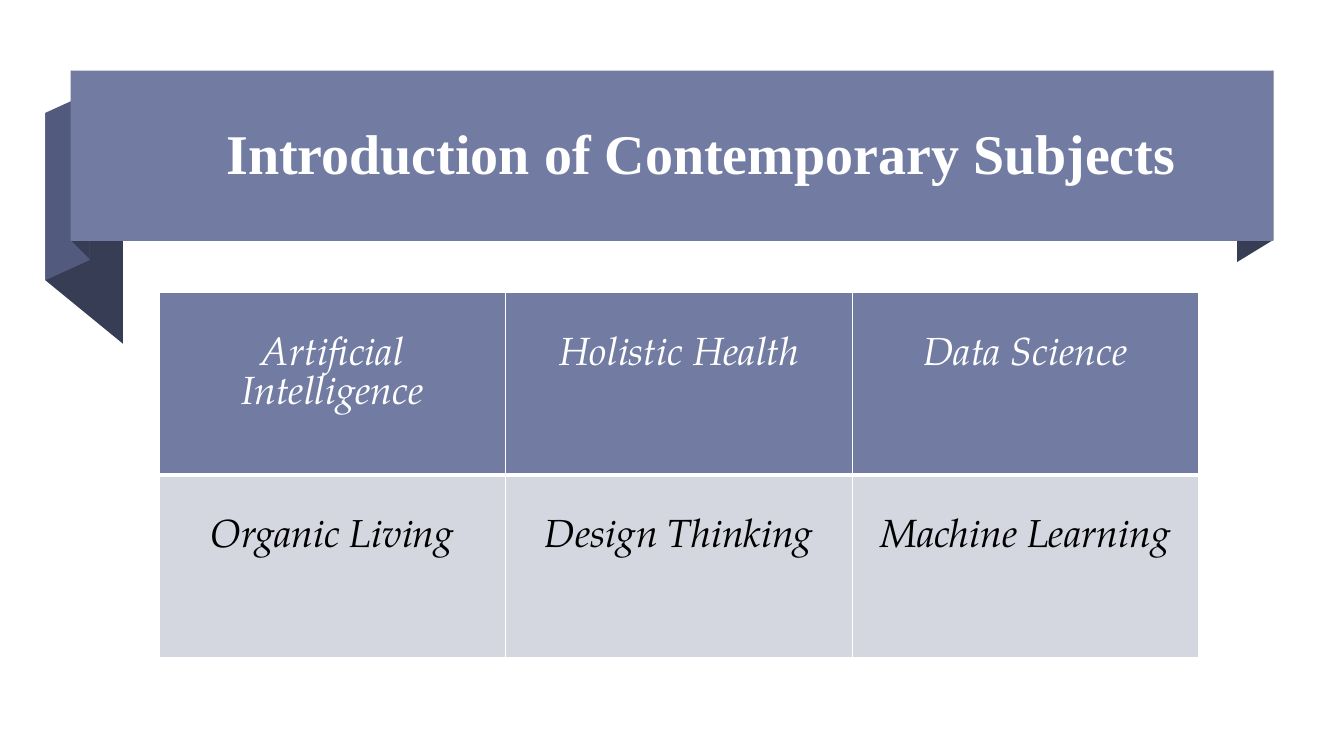
from lxml import etree
from pptx import Presentation
from pptx.dml.color import RGBColor
from pptx.enum.shapes import MSO_SHAPE
from pptx.enum.text import MSO_ANCHOR, PP_ALIGN
from pptx.oxml.ns import qn
from pptx.util import Inches, Pt

RECTANGLE = MSO_SHAPE.RECTANGLE
MIDDLE = MSO_ANCHOR.MIDDLE
TOP = MSO_ANCHOR.TOP
CENTER = PP_ALIGN.CENTER
TITLE_ONLY = 5

WHITE = "FFFFFF"
BLACK = "000000"
BAND = "727CA3"
FOLD = "525B7E"
SHADE = "373D54"
PALE = "D5D7E0"

RIBBON_FOLDS = [
    (SHADE, [(12.63, 2.38), (12.27, 2.6), (12.27, 0.91), (12.63, 0.7)]),
    (SHADE, [(1.22, 3.41), (0.45, 2.78), (0.45, 1.12), (1.22, 1.75)]),
    (FOLD, [(0.89, 2.58), (0.45, 2.78), (0.45, 1.12), (0.89, 0.92)]),
    (SHADE, [(0.89, 2.57), (0.71, 2.39), (0.71, 0.7), (0.89, 0.89)]),
]
SUBJECTS = [
    ["Artificial Intelligence", "Holistic Health", "Data Science"],
    ["Organic Living", "Design Thinking", "Machine Learning"],
]
ROW_STYLES = [
    (BAND, WHITE, {"L": 1, "R": 1, "T": 1, "B": 3}),
    (PALE, BLACK, {"L": 1, "R": 1, "T": 3, "B": 1}),
]


def color(value):
    return RGBColor.from_string(value)


class SubjectSlide:
    title_font = "Times New Roman"
    body_font = "TeX Gyre Pagella"

    def __init__(self, presentation):
        self.slide = presentation.slides.add_slide(presentation.slide_layouts[TITLE_ONLY])

    def paint(self, shape, fill):
        shape.shadow.inherit = False
        shape.fill.solid()
        shape.fill.fore_color.rgb = color(fill)
        shape.line.fill.background()

    def add_text(self, text_frame, text, font, size, ink, bold=False, italic=False):
        paragraph = text_frame.paragraphs[0]
        paragraph.alignment = CENTER
        run = paragraph.add_run()
        run.text = text
        run.font.name = font
        run.font.size = Pt(size)
        run.font.color.rgb = color(ink)
        run.font.bold = bold
        run.font.italic = italic
        return paragraph

    def ribbon(self, folds, box):
        group = self.slide.shapes.add_group_shape()
        for fill, points in folds:
            corners = [(Inches(x), Inches(y)) for x, y in points]
            builder = group.shapes.build_freeform(*corners[0])
            builder.add_line_segments(corners[1:], close=True)
            self.paint(builder.convert_to_shape(), fill)
        band = group.shapes.add_shape(RECTANGLE, *map(Inches, box))
        self.paint(band, BAND)

    def title(self, text, box):
        title = self.slide.shapes.title
        title.left, title.top, title.width, title.height = map(Inches, box)
        title.text_frame.word_wrap = True
        title.text_frame.vertical_anchor = MIDDLE
        paragraph = self.add_text(title.text_frame, text, self.title_font, 40, WHITE, bold=True)
        paragraph.line_spacing = 0.9
        title.element.getparent().append(title.element)

    def borders(self, cell, widths):
        properties = cell._tc.get_or_add_tcPr()
        for side, width in widths.items():
            line = etree.SubElement(properties, qn(f"a:ln{side}"), w=str(Pt(width)))
            fill = etree.SubElement(line, qn("a:solidFill"))
            etree.SubElement(fill, qn("a:srgbClr"), val=WHITE)

    def table(self, rows, styles, box):
        frame = self.slide.shapes.add_table(len(rows), len(rows[0]), *map(Inches, box))
        for row, texts, (fill, ink, widths) in zip(frame.table.rows, rows, styles):
            for cell, text in zip(row.cells, texts):
                self.borders(cell, widths)
                cell.fill.solid()
                cell.fill.fore_color.rgb = color(fill)
                cell.vertical_anchor = TOP
                cell.margin_top = Inches(0.44)
                self.add_text(cell.text_frame, text, self.body_font, 28, ink, italic=True)


def main():
    presentation = Presentation()
    presentation.slide_width = Inches(13.33)
    presentation.slide_height = Inches(7.5)
    page = SubjectSlide(presentation)
    page.ribbon(RIBBON_FOLDS, (0.7, 0.7, 11.93, 1.69))
    page.title("Introduction of Contemporary Subjects", (1.48, 0.83, 10.94, 1.45))
    page.table(SUBJECTS, ROW_STYLES, (1.58, 2.9, 10.31, 3.62))
    presentation.save("out.pptx")


if __name__ == "__main__":
    main()
